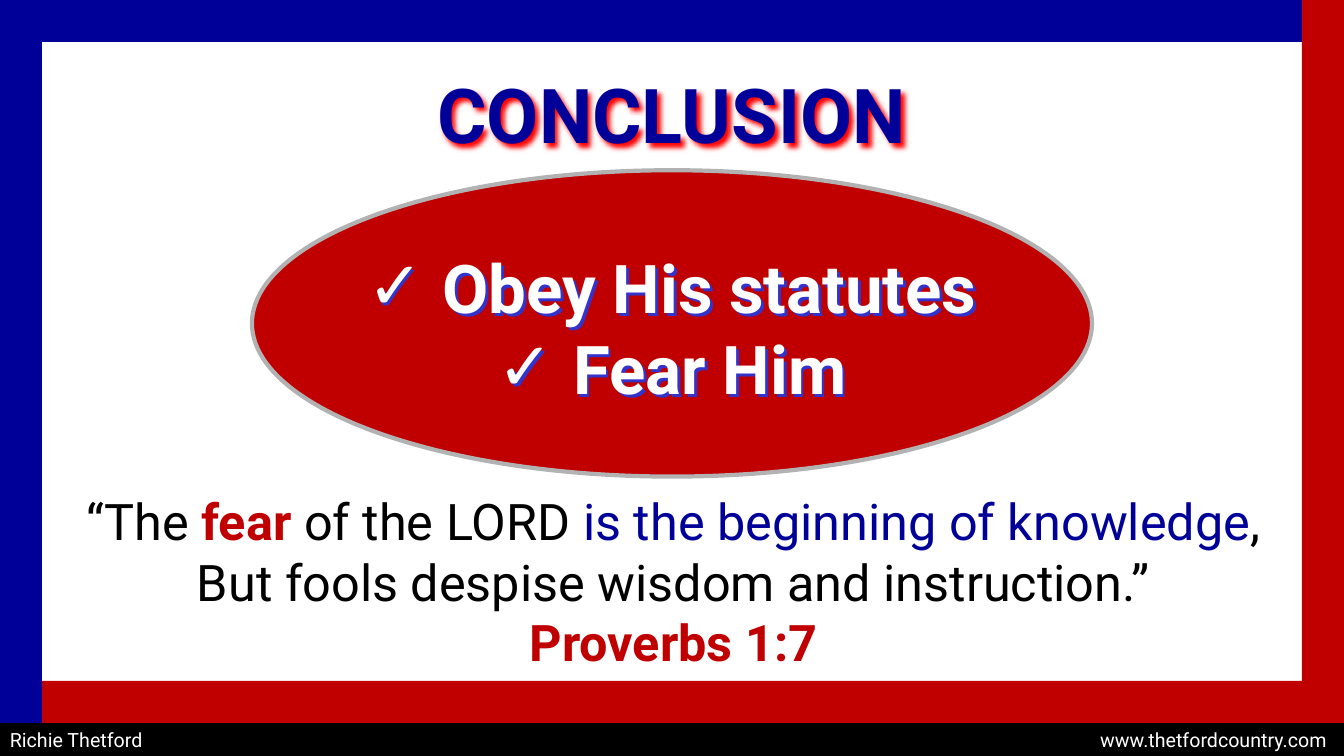
from lxml import etree
from pptx import Presentation
from pptx import util as u
from pptx.dml.color import RGBColor
from pptx.enum import shapes, text
from pptx.oxml import parse_xml
from pptx.oxml.ns import nsdecls, qn

NAVY = RGBColor(0x00, 0x00, 0x99)
RED = RGBColor(0xC0, 0x00, 0x00)
BLUE = RGBColor(0x33, 0x33, 0xCC)
SHADOW_RED = RGBColor(0xFF, 0x00, 0x00)
GREY = RGBColor(0xB2, 0xB2, 0xB2)
BLACK = RGBColor(0x00, 0x00, 0x00)
WHITE = RGBColor(0xFF, 0xFF, 0xFF)

WIDTH, HEIGHT = u.Cm(33.87), u.Cm(19.05)
BAND = u.Cm(1.06)
FOOTER = u.Cm(0.83)


def place(shape, box):
    for name, value in zip(("left", "top", "width", "height"), box):
        setattr(shape, name, value)


def format_frame(frame, **values):
    settings = {"word_wrap": True, "auto_size": text.MSO_AUTO_SIZE.NONE, **values}
    for name, value in settings.items():
        setattr(frame, name, value)


def add_span(para, words, size, color, bold=False):
    span = para.add_run()
    span.text = words
    for name, value in {"name": "Roboto", "size": u.Pt(size), "bold": bold}.items():
        setattr(span.font, name, value)
    span.font.color.rgb = color


def add_text_shadow(shape, color, distance, blur):
    """Shadow on an unfilled shape, which falls from its letters."""
    shape.fill.background()
    shape._element.spPr.append(parse_xml(
        f'<a:effectLst {nsdecls("a")}><a:outerShdw blurRad="{u.Pt(blur)}" '
        f'dist="{u.Pt(distance)}" dir="2700000" algn="tl" rotWithShape="0">'
        f'<a:srgbClr val="{color}"/></a:outerShdw></a:effectLst>'))


def add_solid(page, kind, box, fill, line=None):
    shape = page.shapes.add_shape(kind, *box)
    shape.shadow.inherit = False
    shape.fill.solid()
    shape.fill.fore_color.rgb = fill
    if line is None:
        shape.line.fill.background()
    else:
        shape.line.color.rgb = line
        shape.line.width = u.Pt(3)
    return shape


INSETS = {"margin_left": u.Cm(0.18), "margin_right": u.Cm(0.18),
          "margin_top": u.Cm(0.09), "margin_bottom": u.Cm(0.09)}


def add_title(page, box):
    title = page.shapes.title
    place(title, box)
    format_frame(title.text_frame, vertical_anchor=text.MSO_ANCHOR.MIDDLE, **INSETS)
    para = title.text_frame.paragraphs[0]
    para.alignment = text.PP_ALIGN.CENTER
    add_span(para, "CONCLUSION", 54, NAVY, True)
    add_text_shadow(title, SHADOW_RED, 3, 3)


def add_verse(page, box):
    verse = page.placeholders[1]
    place(verse, box)
    format_frame(verse.text_frame, vertical_anchor=text.MSO_ANCHOR.TOP, **INSETS)
    para = verse.text_frame.paragraphs[0]
    para.alignment = text.PP_ALIGN.CENTER
    for words, color, bold in (
            ("“The ", BLACK, False),
            ("fear", RED, True),
            (" of the LORD ", BLACK, False),
            ("is the beginning of knowledge", NAVY, False),
            (", But fools despise wisdom and instruction.”", BLACK, False)):
        add_span(para, words, 36, color, bold)
    para.add_line_break()
    add_span(para, "Proverbs 1:7", 36, RED, True)


def add_checklist(page, box):
    """Red ellipse filling the box, with a check-marked list across its middle."""
    left, top, width, height = box
    add_solid(page, shapes.MSO_SHAPE.OVAL, box, RED, GREY)
    listing = page.shapes.add_textbox(left, top + u.Cm(1.8), width, u.Cm(4.37))
    frame = listing.text_frame
    format_frame(frame)
    indent = u.Cm(1.9)
    for number, words in enumerate(("Obey His statutes", "Fear Him")):
        para = frame.add_paragraph() if number else frame.paragraphs[0]
        para.alignment = text.PP_ALIGN.CENTER
        add_span(para, words, 48, WHITE, True)
        properties = para._p.get_or_add_pPr()
        properties.set("marL", str(indent))
        properties.set("indent", str(-indent))
        etree.SubElement(properties, qn("a:buFont"), typeface="Roboto")
        etree.SubElement(properties, qn("a:buChar"), char="✓")
    add_text_shadow(listing, BLUE, 3, 0)


def add_border(page, box):
    left, top, width, height = box
    length, bottom = width - BAND, height - FOOTER - BAND
    for band, color in (
            ((left, top, length, BAND), NAVY),
            ((left + length, top, BAND, height), RED),
            ((left, top + bottom, length, BAND), RED),
            ((left, top, BAND, height), NAVY)):
        add_solid(page, shapes.MSO_SHAPE.RECTANGLE, band, color)


def add_footer(page, box):
    """Black strip with the name at the left and the address at a right tab."""
    bar = add_solid(page, shapes.MSO_SHAPE.RECTANGLE, box, BLACK)
    margin = u.Cm(0.25)
    format_frame(bar.text_frame, margin_left=margin, margin_right=margin,
                 margin_top=0, margin_bottom=0,
                 vertical_anchor=text.MSO_ANCHOR.MIDDLE)
    para = bar.text_frame.paragraphs[0]
    para.alignment = text.PP_ALIGN.LEFT
    tabs = etree.SubElement(para._p.get_or_add_pPr(), qn("a:tabLst"))
    etree.SubElement(tabs, qn("a:tab"), pos=str(box[2] - u.Cm(0.68)), algn="r")
    add_span(para, "Richie Thetford\twww.thetfordcountry.com", 14, WHITE)


def main():
    deck = Presentation()
    deck.slide_width, deck.slide_height = WIDTH, HEIGHT
    page = deck.slides.add_slide(deck.slide_layouts[0])
    add_title(page, (u.Cm(5.5), u.Cm(1.27), u.Cm(22.86), u.Cm(3.18)))
    add_verse(page, (u.Cm(1.85), u.Cm(12.27), u.Cm(30.25), u.Cm(4.67)))
    add_checklist(page, (u.Cm(6.35), u.Cm(4.29), u.Cm(21.17), u.Cm(7.72)))
    add_border(page, (0, 0, WIDTH, HEIGHT))
    add_footer(page, (0, HEIGHT - FOOTER, WIDTH, FOOTER))
    deck.save("out.pptx")


if __name__ == "__main__":
    main()
